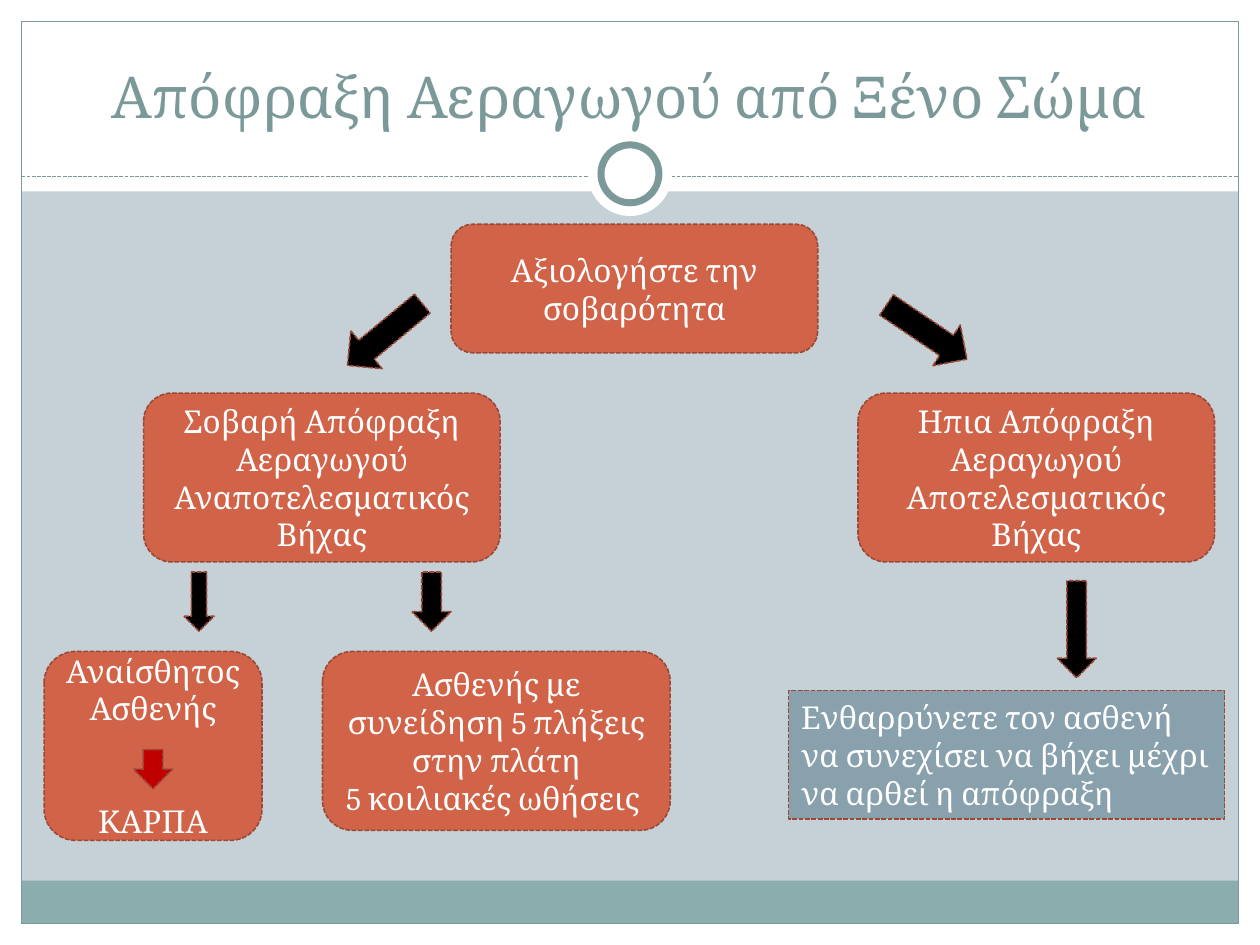
from lxml.etree import SubElement
from pptx import Presentation
from pptx.dml.color import RGBColor
from pptx.enum.dml import MSO_LINE
from pptx.enum.shapes import MSO_CONNECTOR, MSO_SHAPE
from pptx.enum.text import MSO_ANCHOR, PP_ALIGN
from pptx.oxml.ns import qn
from pptx.util import Inches, Pt

HUES = {
    "back": "C5D1D7", "white": "FFFFFF", "band": "8CADAE", "teal": "7C999A",
    "card": "D16349", "edge": "9B4936", "note": "88A1AD", "red": "C00000",
    "black": "000000",
}
FONT = "Cambria"


def hue(name):
    return RGBColor.from_string(HUES[name])


def add_part(slide, kind, box, fill=None, line=None, width=0.75, dash=None):
    part = slide.shapes.add_shape(kind, *map(Inches, box))
    part.shadow.inherit = False
    if fill:
        part.fill.solid()
        part.fill.fore_color.rgb = hue(fill)
    else:
        part.fill.background()
    if line:
        part.line.color.rgb = hue(line)
        part.line.width = Pt(width)
        part.line.dash_style = dash
    else:
        part.line.fill.background()
    return part


def set_text(part, text, size, color, align, anchor):
    frame = part.text_frame
    frame.word_wrap = True
    frame.vertical_anchor = anchor
    frame.text = text
    for para in frame.paragraphs:
        para.alignment = align
        for run in para.runs:
            run.font.size = Pt(size)
            run.font.name = FONT
            run.font.color.rgb = hue(color)


def add_node(slide, kind, box, fill, text="", align=PP_ALIGN.CENTER):
    node = add_part(slide, kind, box, fill, "edge", 0.9, MSO_LINE.SQUARE_DOT)
    if text:
        set_text(node, text, 18, "white", align, MSO_ANCHOR.MIDDLE)
    return node


def add_frame(slide, box):
    left, top, width, height = box
    edge, head = 0.17, 1.52
    right, base = left + width - edge, top + height - edge
    rect = MSO_SHAPE.RECTANGLE
    for side in (
        (left, base, width, edge),
        (left, top, width, head),
        (left, top, edge, height),
        (right, top, edge, height),
    ):
        add_part(slide, rect, side, "white")
    inner = width - 2 * edge
    add_part(slide, rect, (left + edge, base - 0.34, inner, 0.34), "band")
    add_part(slide, rect, (left + edge, top + edge, inner, height - 2 * edge), line="teal")

    rule = top + 1.4
    line = slide.shapes.add_connector(
        MSO_CONNECTOR.STRAIGHT, *map(Inches, (left + edge, rule, right, rule)))
    line.line.color.rgb = hue("teal")
    line.line.width = Pt(0.75)
    line.line.dash_style = MSO_LINE.SQUARE_DOT
    SubElement(line._element.spPr, qn("a:effectLst"))

    mid_x, mid_y = left + width / 2, top + 1.38
    for size, color in ((0.67, None), (0.46, "teal")):
        ring = (mid_x - size / 2, mid_y - size / 2, size, size)
        add_part(slide, MSO_SHAPE.OVAL, ring, "white", color, 4)


def add_title(slide, box):
    title = slide.shapes.add_textbox(*map(Inches, box))
    set_text(title, "Απόφραξη Αεραγωγού από Ξένο Σώμα", 33, "teal",
             PP_ALIGN.CENTER, MSO_ANCHOR.BOTTOM)


def add_flow(slide, box):
    left, top = box[:2]
    card = MSO_SHAPE.ROUNDED_RECTANGLE

    def place(x, y, width, height):
        return left + x, top + y, width, height

    for spot, text in (
        ((3.23, 0, 2.91, 1.02), "Αξιολογήστε την σοβαρότητα"),
        ((0.79, 1.34, 2.83, 1.34),
         "Σοβαρή Απόφραξη Αεραγωγού Αναποτελεσματικός Βήχας"),
        ((6.46, 1.34, 2.83, 1.34),
         "Ηπια Απόφραξη Αεραγωγού Αποτελεσματικός Βήχας"),
        ((2.21, 3.39, 2.76, 1.42),
         "Ασθενής με συνείδηση 5 πλήξεις στην πλάτη\n5 κοιλιακές ωθήσεις "),
    ):
        add_node(slide, card, place(*spot), "card", text)

    faint = add_node(slide, MSO_SHAPE.FLOWCHART_ALTERNATE_PROCESS,
                     place(0, 3.39, 1.73, 1.5), "card", "Αναίσθητος Ασθενής\nΚΑΡΠΑ")
    faint.text_frame.paragraphs[1].space_before = Pt(43)

    for spot, color, turn in (
        ((0.71, 4.17, 0.31, 0.31), "red", 0),
        ((1.11, 2.76, 0.24, 0.47), "black", 0),
        ((2.92, 2.76, 0.31, 0.47), "black", 0),
        ((6.81, 0.47, 0.39, 0.77), "black", 304),
        ((2.51, 0.49, 0.39, 0.77), "black", 50.4),
        ((8.04, 2.83, 0.31, 0.77), "black", 0),
    ):
        arrow = add_node(slide, MSO_SHAPE.DOWN_ARROW, place(*spot), color)
        arrow.rotation = turn

    add_node(slide, MSO_SHAPE.RECTANGLE, place(5.91, 3.7, 3.46, 1.02), "note",
             "Ενθαρρύνετε τον ασθενή\nνα συνεχίσει να βήχει μέχρι\nνα αρθεί η απόφραξη",
             PP_ALIGN.LEFT)


def main():
    deck = Presentation()
    deck.slide_width, deck.slide_height = Inches(10), Inches(7.5)
    slide = deck.slides.add_slide(deck.slide_layouts[6])
    slide.background.fill.solid()
    slide.background.fill.fore_color.rgb = hue("back")
    add_frame(slide, (0, 0, 10, 7.5))
    add_title(slide, (0.33, 0.25, 9.33, 0.83))
    add_flow(slide, (0.35, 1.78, 9.37, 4.89))
    deck.save("out.pptx")


if __name__ == "__main__":
    main()
